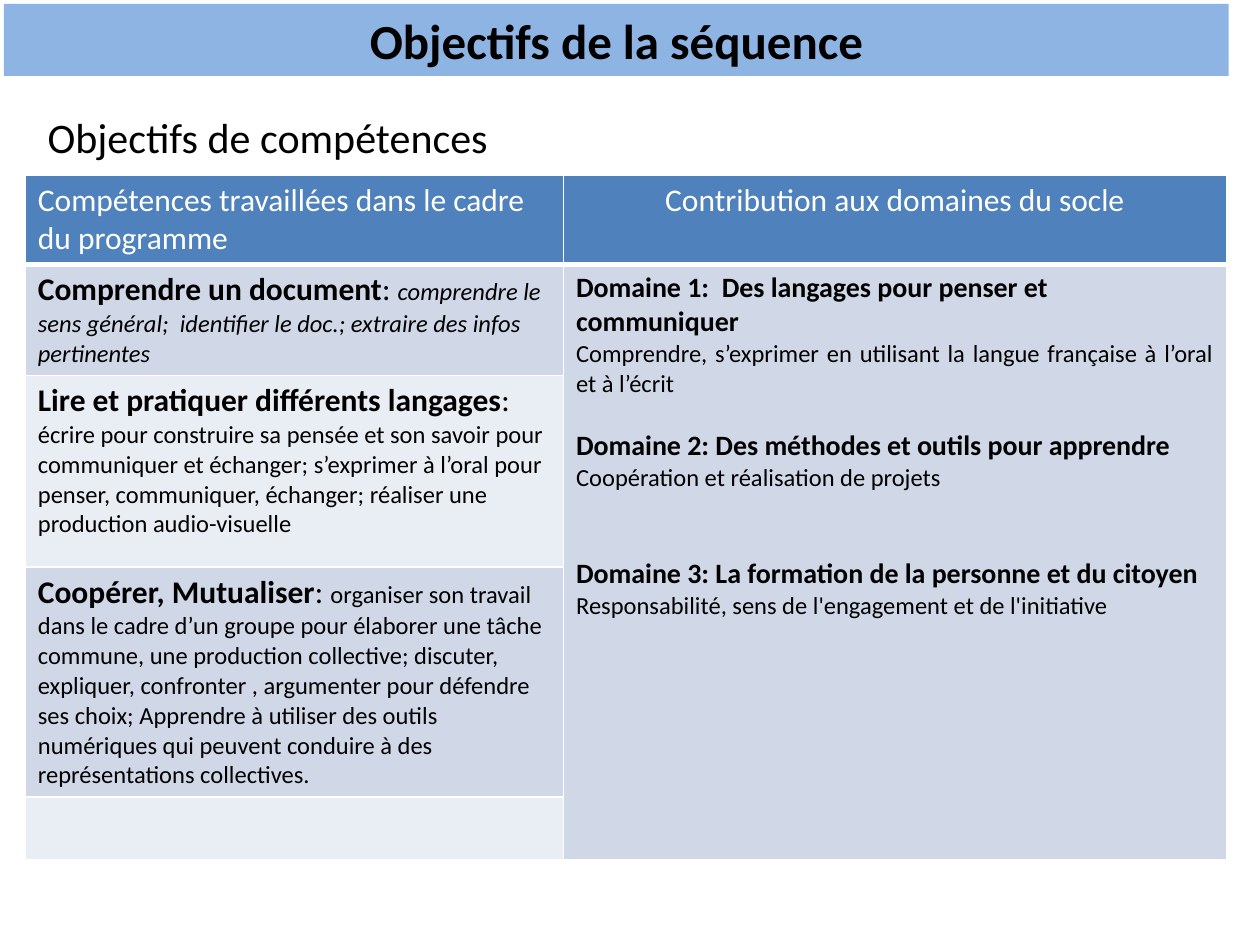
from lxml import etree
from pptx import Presentation
from pptx import util as u
from pptx.dml.color import RGBColor
from pptx.enum import text
from pptx.oxml import ns

BLACK = RGBColor(0x00, 0x00, 0x00)
WHITE = RGBColor(0xFF, 0xFF, 0xFF)
BANNER = RGBColor(0x8E, 0xB4, 0xE3)
HEADER = RGBColor(0x4F, 0x81, 0xBD)
BAND_DARK = RGBColor(0xD0, 0xD8, 0xE8)
BAND_LIGHT = RGBColor(0xE9, 0xED, 0xF4)

COLUMN_WIDTHS = [10.85, 13.36]
ROW_HEIGHTS = [1.75, 2.21, 3.86, 4.57, 1.27]
HEADINGS = [
    ("Compétences travaillées dans le cadre du programme", text.PP_ALIGN.LEFT),
    ("Contribution aux domaines du socle", text.PP_ALIGN.CENTER),
]
SKILLS = [
    ("Comprendre un document",
     "comprendre le sens général;  identifier le doc.; extraire des infos pertinentes", True),
    ("Lire et pratiquer différents langages",
     "écrire pour construire sa pensée et son savoir pour communiquer et échanger; "
     "s’exprimer à l’oral pour penser, communiquer, échanger; "
     "réaliser une production audio-visuelle", False),
    ("Coopérer, Mutualiser",
     "organiser son travail dans le cadre d’un groupe pour élaborer une tâche commune, "
     "une production collective; discuter, expliquer, confronter , argumenter pour défendre "
     "ses choix; Apprendre à utiliser des outils numériques qui peuvent conduire à des "
     "représentations collectives.", False),
]
LEFT, JUSTIFY = text.PP_ALIGN.LEFT, text.PP_ALIGN.JUSTIFY
DOMAINS = [
    ("Domaine 1:  Des langages pour penser et communiquer",
     "Comprendre, s’exprimer en utilisant la langue française à l’oral et à l’écrit",
     LEFT, JUSTIFY, 0),
    ("Domaine 2: Des méthodes et outils pour apprendre",
     "Coopération et réalisation de projets", JUSTIFY, JUSTIFY, 17),
    ("Domaine 3: La formation de la personne et du citoyen",
     "Responsabilité, sens de l'engagement et de l'initiative", LEFT, LEFT, 36.5),
]


def add_run(paragraph, content, size=18, color=BLACK, bold=False, italic=False, font="Calibri"):
    run = paragraph.add_run()
    run.text = content
    run.font.name = font
    run.font.size = u.Pt(size)
    run.font.color.rgb = color
    run.font.bold = bold
    run.font.italic = italic


class SlideBuilder:
    def __init__(self, slide):
        self.slide = slide
        self.border_color = WHITE

    def title(self, content, left, top, width, height):
        shape = self.slide.shapes.title
        shape.left, shape.top = u.Cm(left), u.Cm(top)
        shape.width, shape.height = u.Cm(width), u.Cm(height)
        shape.fill.solid()
        shape.fill.fore_color.rgb = BANNER
        frame = shape.text_frame
        frame.auto_size = text.MSO_AUTO_SIZE.NONE
        frame.vertical_anchor = text.MSO_ANCHOR.MIDDLE
        paragraph = frame.paragraphs[0]
        paragraph.alignment = text.PP_ALIGN.CENTER
        add_run(paragraph, content, size=28, bold=True)

    def label(self, content, left, top, width, height):
        shape = self.slide.shapes.add_textbox(u.Cm(left), u.Cm(top), u.Cm(width), u.Cm(height))
        shape.text_frame.word_wrap = True
        add_run(shape.text_frame.paragraphs[0], content, size=24)

    def table(self, left, top, widths, heights):
        frame = self.slide.shapes.add_table(
            len(heights), len(widths), u.Cm(left), u.Cm(top),
            u.Cm(sum(widths)), u.Cm(sum(heights)))
        table = frame.table
        table.horz_banding = False
        for column, width in zip(table.columns, widths):
            column.width = u.Cm(width)
        for row, height in zip(table.rows, heights):
            row.height = u.Cm(height)
        return table

    def cell_style(self, cell, fill, bottom=1):
        properties = cell._tc.get_or_add_tcPr()
        for side, width in (("L", 1), ("R", 1), ("T", 1), ("B", bottom)):
            line = etree.SubElement(properties, ns.qn(f"a:ln{side}"), w=str(u.Pt(width)))
            solid = etree.SubElement(line, ns.qn("a:solidFill"))
            etree.SubElement(solid, ns.qn("a:srgbClr"), val=str(self.border_color))
        cell.fill.solid()
        cell.fill.fore_color.rgb = fill


def fill_table(table, builder):
    for row in range(len(ROW_HEIGHTS)):
        for column in range(len(COLUMN_WIDTHS)):
            if row == 0:
                fill = HEADER
            else:
                fill = BAND_DARK if column == 1 or row % 2 else BAND_LIGHT
            builder.cell_style(table.cell(row, column), fill, bottom=1 if row else 3)
    table.cell(1, 1).merge(table.cell(len(ROW_HEIGHTS) - 1, 1))

    for column, (heading, alignment) in enumerate(HEADINGS):
        paragraph = table.cell(0, column).text_frame.paragraphs[0]
        paragraph.alignment = alignment
        add_run(paragraph, heading, color=WHITE)

    for row, (skill, detail, italic) in enumerate(SKILLS, start=1):
        paragraph = table.cell(row, 0).text_frame.paragraphs[0]
        add_run(paragraph, skill, bold=True)
        add_run(paragraph, ": ")
        add_run(paragraph, detail, size=14, italic=italic)

    frame = table.cell(1, 1).text_frame
    for index, (domain, detail, domain_alignment, detail_alignment, gap) in enumerate(DOMAINS):
        paragraph = frame.add_paragraph() if index else frame.paragraphs[0]
        paragraph.alignment = domain_alignment
        paragraph.space_before = u.Pt(gap)
        add_run(paragraph, domain, size=16, bold=True)
        paragraph = frame.add_paragraph()
        paragraph.alignment = detail_alignment
        add_run(paragraph, detail, size=14)


def main():
    presentation = Presentation()
    presentation.slide_width, presentation.slide_height = u.Cm(25.4), u.Cm(19.05)
    builder = SlideBuilder(presentation.slides.add_slide(presentation.slide_layouts[5]))
    builder.title("Objectifs de la séquence", 0.08, 0.08, 24.69, 1.45)
    table = builder.table(0.51, 3.53, COLUMN_WIDTHS, ROW_HEIGHTS)
    fill_table(table, builder)
    builder.label("Objectifs de compétences", 0.71, 2.13, 12.6, 1.27)
    presentation.save("out.pptx")


if __name__ == "__main__":
    main()
